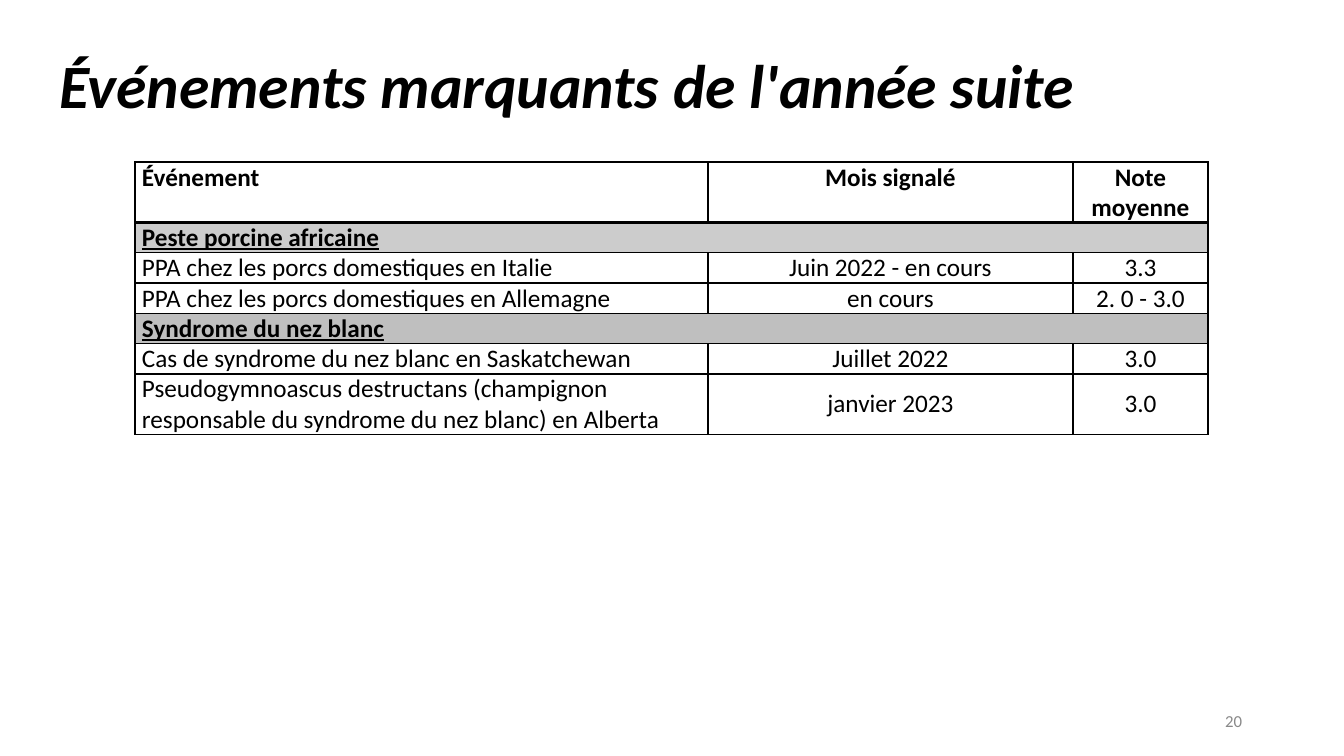
import pptx
import pptx.util
import pptx.dml.color
import pptx.enum.text
import pptx.oxml
import pptx.oxml.ns

TITLE = "Événements marquants de l'année suite"
PAGE = "20"
HEADER = ("Événement", "Mois signalé", "Note moyenne")
SECTIONS = [
    ("Peste porcine africaine", "ppa", [
        ("PPA chez les porcs domestiques en Italie", "Juin 2022 - en cours", "3.3"),
        ("PPA chez les porcs domestiques en Allemagne", "en cours", "2. 0 - 3.0"),
    ]),
    ("Syndrome du nez blanc", "nez", [
        ("Cas de syndrome du nez blanc en Saskatchewan", "Juillet 2022", "3.0"),
        ("Pseudogymnoascus destructans (champignon responsable du syndrome "
         "du nez blanc) en Alberta", "janvier 2023", "3.0"),
    ]),
]
COLORS = {"text": "000000", "page": "898989", "ppa": "CCCCCC", "nez": "BFBFBF"}
FONT = "Calibri"
COL_WIDTHS = (573, 365, 135)
ROW_HEIGHT = 30
TALL_ROWS = (0, 6)
NO_STYLE = "{2D5ABB26-0587-4C30-8999-92F81FD0307C}"

ALIGN = pptx.enum.text.PP_ALIGN
ANCHOR = pptx.enum.text.MSO_ANCHOR


def px(n):
    return pptx.util.Emu(round(n * 914400 / 100.8))


def rgb(name):
    return pptx.dml.color.RGBColor.from_string(COLORS[name])


def write(tf, text, size, color="text", align=ALIGN.LEFT, bold=False, italic=False, underline=False):
    p = tf.paragraphs[0]
    p.alignment = align
    r = p.add_run()
    r.text = text
    f = r.font
    f.name, f.size = FONT, pptx.util.Pt(size)
    f.bold, f.italic, f.underline = bold, italic, underline
    f.color.rgb = rgb(color)
    return p


def draw_borders(cell, top=1, bottom=1):
    """Border widths are in points; the sides are always 1 pt."""
    tcPr = cell._tc.get_or_add_tcPr()
    for side, width in (("L", 1), ("R", 1), ("T", top), ("B", bottom)):
        tcPr.append(pptx.oxml.parse_xml(
            f'<a:ln{side} {pptx.oxml.ns.nsdecls("a")} w="{pptx.util.Pt(width)}">'
            f'<a:solidFill><a:srgbClr val="{COLORS["text"]}"/></a:solidFill></a:ln{side}>'))


def add_events_table(slide):
    rows = [(HEADER, None)]
    for name, fill, events in SECTIONS:
        rows.append(((name, "", ""), fill))
        rows += [(event, None) for event in events]
    heights = [ROW_HEIGHT * (2 if i in TALL_ROWS else 1) for i in range(len(rows))]

    frame = slide.shapes.add_table(len(rows), len(COL_WIDTHS), px(135), px(162),
                                   px(sum(COL_WIDTHS)), px(sum(heights)))
    table = frame.table
    table._tbl.tblPr.find(pptx.oxml.ns.qn("a:tableStyleId")).text = NO_STYLE
    table.first_row = table.horz_banding = False
    for column, width in zip(table.columns, COL_WIDTHS):
        column.width = px(width)

    for i, (texts, fill) in enumerate(rows):
        table.rows[i].height = px(heights[i])
        header = i == 0
        for j, text in enumerate(texts):
            cell = table.cell(i, j)
            cell.margin_left = cell.margin_right = px(7)
            cell.margin_top = cell.margin_bottom = 0
            cell.vertical_anchor = ANCHOR.TOP if header else ANCHOR.MIDDLE
            draw_borders(cell, top=2 if i == 1 else 1, bottom=2 if header else 1)
            if fill:
                cell.fill.solid()
                cell.fill.fore_color.rgb = rgb(fill)
            else:
                cell.fill.background()
            if text:
                align = ALIGN.CENTER if j else ALIGN.JUSTIFY if header else ALIGN.LEFT
                write(cell.text_frame, text, 18, align=align,
                      bold=header or bool(fill), underline=bool(fill))
        if fill:
            table.cell(i, 0).merge(table.cell(i, len(COL_WIDTHS) - 1))


def main():
    prs = pptx.Presentation()
    prs.slide_width, prs.slide_height = px(1344), px(756)
    slide = prs.slides.add_slide(prs.slide_layouts[5])

    title = slide.shapes.title
    title.left, title.top, title.width, title.height = px(49), px(16), px(1159), px(146)
    title.text_frame.vertical_anchor = ANCHOR.MIDDLE
    write(title.text_frame, TITLE, 44, bold=True, italic=True).line_spacing = 0.9

    page = slide.shapes.add_textbox(px(950), px(701), px(302), px(40))
    page.text_frame.word_wrap = True
    page.text_frame.vertical_anchor = ANCHOR.MIDDLE
    write(page.text_frame, PAGE, 12, "page", ALIGN.RIGHT)

    add_events_table(slide)
    prs.save("out.pptx")


if __name__ == "__main__":
    main()
